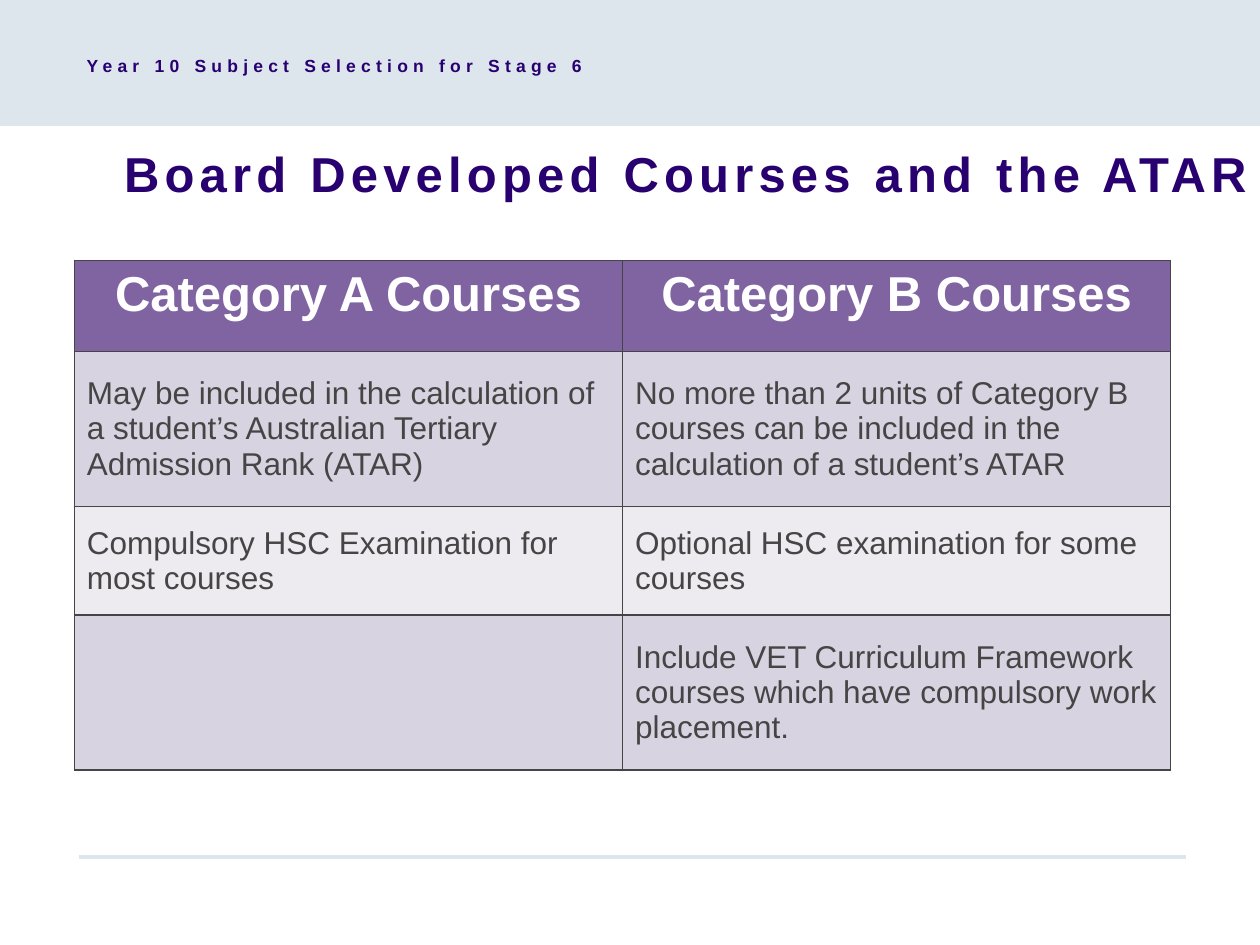
import dataclasses

import lxml.etree
import pptx
import pptx.dml.color
import pptx.enum.shapes
import pptx.enum.text
import pptx.oxml.ns
import pptx.util

Pt = pptx.util.Pt
ALIGN = pptx.enum.text.PP_ALIGN
ANCHOR = pptx.enum.text.MSO_ANCHOR
qn = pptx.oxml.ns.qn

COLOURS = {
    "pale_blue": "DDE5ED",
    "indigo": "280070",
    "purple": "8064A2",
    "dark_band": "D8D3E0",
    "light_band": "EDEAF0",
    "white": "FFFFFF",
    "grey": "454545",
}
FONT = "Arial"
LETTER_SPACING = 3
BORDER_WIDTH = 1
COLUMN_WIDTH = 313.2


@dataclasses.dataclass
class Heading:
    text: str
    left: float
    top: float
    width: float
    height: float
    size: float
    align: ALIGN


@dataclasses.dataclass
class CourseRow:
    height: float
    fill: str
    texts: tuple[str, str]
    size: float = 18
    bold: bool = False
    colour: str = "grey"
    align: ALIGN = ALIGN.LEFT
    anchor: ANCHOR = ANCHOR.MIDDLE


HEADINGS = [
    Heading("Board Developed Courses and the ATAR", 42.5, 78.5, 699, 49.7, 28, ALIGN.CENTER),
    Heading("Year 10 Subject Selection for Stage 6", 42.5, 28, 452, 23, 10, ALIGN.LEFT),
]
COURSE_ROWS = [
    CourseRow(51.8, "purple", ("Category A Courses", "Category B Courses"),
              28, True, "white", ALIGN.CENTER, ANCHOR.TOP),
    CourseRow(88.6, "dark_band", (
        "May be included in the calculation of a student’s Australian Tertiary Admission Rank (ATAR)",
        "No more than 2 units of Category B courses can be included in the calculation of a student’s ATAR")),
    CourseRow(62.2, "light_band", (
        "Compulsory HSC Examination for most courses",
        "Optional HSC examination for some courses")),
    CourseRow(88.6, "dark_band", (
        "", "Include VET Curriculum Framework courses which have compulsory work placement.")),
]


def rgb(name: str) -> pptx.dml.color.RGBColor:
    return pptx.dml.color.RGBColor.from_string(COLOURS[name])


def write_text(paragraph, text: str, size: float, bold: bool, colour: str, align: ALIGN):
    paragraph.alignment = align
    run = paragraph.add_run()
    run.text = text
    for attribute, value in {"name": FONT, "size": Pt(size), "bold": bold}.items():
        setattr(run.font, attribute, value)
    run.font.color.rgb = rgb(colour)
    return run


def draw_heading(slide, heading: Heading) -> None:
    box = slide.shapes.add_textbox(
        Pt(heading.left), Pt(heading.top), Pt(heading.width), Pt(heading.height))
    box.text_frame.word_wrap = True
    run = write_text(box.text_frame.paragraphs[0], heading.text, heading.size,
                     True, "indigo", heading.align)
    run.font._element.set("spc", str(LETTER_SPACING * 100))


def add_borders(cell) -> None:
    properties = cell._tc.get_or_add_tcPr()
    for side in ("a:lnL", "a:lnR", "a:lnT", "a:lnB"):
        line = lxml.etree.SubElement(properties, qn(side), w=str(Pt(BORDER_WIDTH)))
        fill = lxml.etree.SubElement(line, qn("a:solidFill"))
        lxml.etree.SubElement(fill, qn("a:srgbClr"), val=COLOURS["grey"])


def draw_course_table(slide, rows: list[CourseRow], left: float, top: float) -> None:
    column_count = len(rows[0].texts)
    table = slide.shapes.add_table(
        len(rows), column_count, Pt(left), Pt(top),
        Pt(COLUMN_WIDTH * column_count), Pt(sum(row.height for row in rows))).table
    table.horz_banding = False
    for column in table.columns:
        column.width = Pt(COLUMN_WIDTH)
    for row_index, row in enumerate(rows):
        table.rows[row_index].height = Pt(row.height)
        for column_index, text in enumerate(row.texts):
            cell = table.cell(row_index, column_index)
            cell.vertical_anchor = row.anchor
            add_borders(cell)
            cell.fill.solid()
            cell.fill.fore_color.rgb = rgb(row.fill)
            if text:
                write_text(cell.text_frame.paragraphs[0], text, row.size,
                           row.bold, row.colour, row.align)


def draw_frame(slide) -> None:
    # Band across the top
    band = slide.shapes.add_shape(
        pptx.enum.shapes.MSO_SHAPE.RECTANGLE, Pt(0), Pt(0), Pt(720), Pt(72))
    band.shadow.inherit = False
    band.fill.solid()
    band.fill.fore_color.rgb = rgb("pale_blue")
    band.line.fill.background()
    # Rule above the footer
    rule = slide.shapes.add_connector(
        pptx.enum.shapes.MSO_CONNECTOR.STRAIGHT, Pt(45.4), Pt(489.6), Pt(677.5), Pt(489.6))
    rule.line.color.rgb = rgb("pale_blue")
    rule.line.width = Pt(2)
    lxml.etree.SubElement(rule._element.spPr, qn("a:effectLst"))


def main() -> None:
    presentation = pptx.Presentation()
    presentation.slide_width, presentation.slide_height = Pt(720), Pt(540)
    slide = presentation.slides.add_slide(presentation.slide_layouts[6])
    draw_frame(slide)
    for heading in HEADINGS:
        draw_heading(slide, heading)
    draw_course_table(slide, COURSE_ROWS, 42.5, 149)
    presentation.save("out.pptx")


if __name__ == "__main__":
    main()
